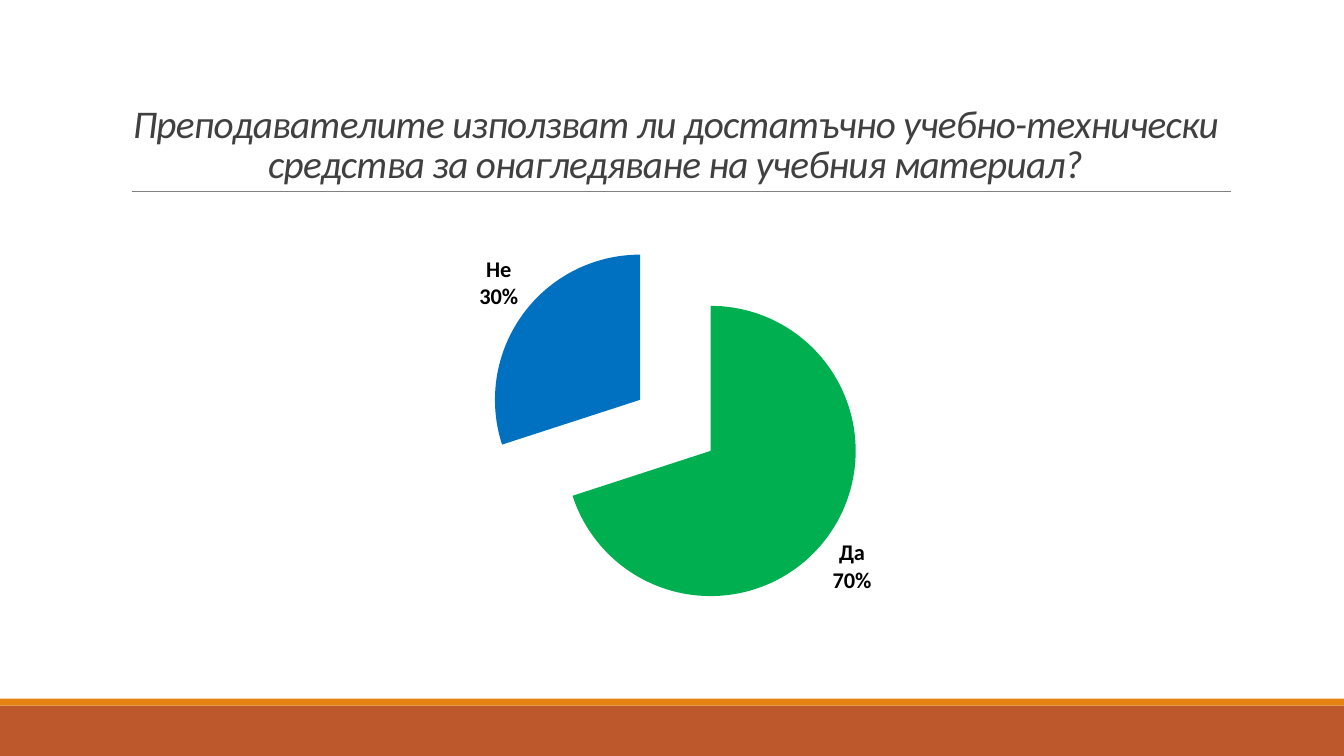
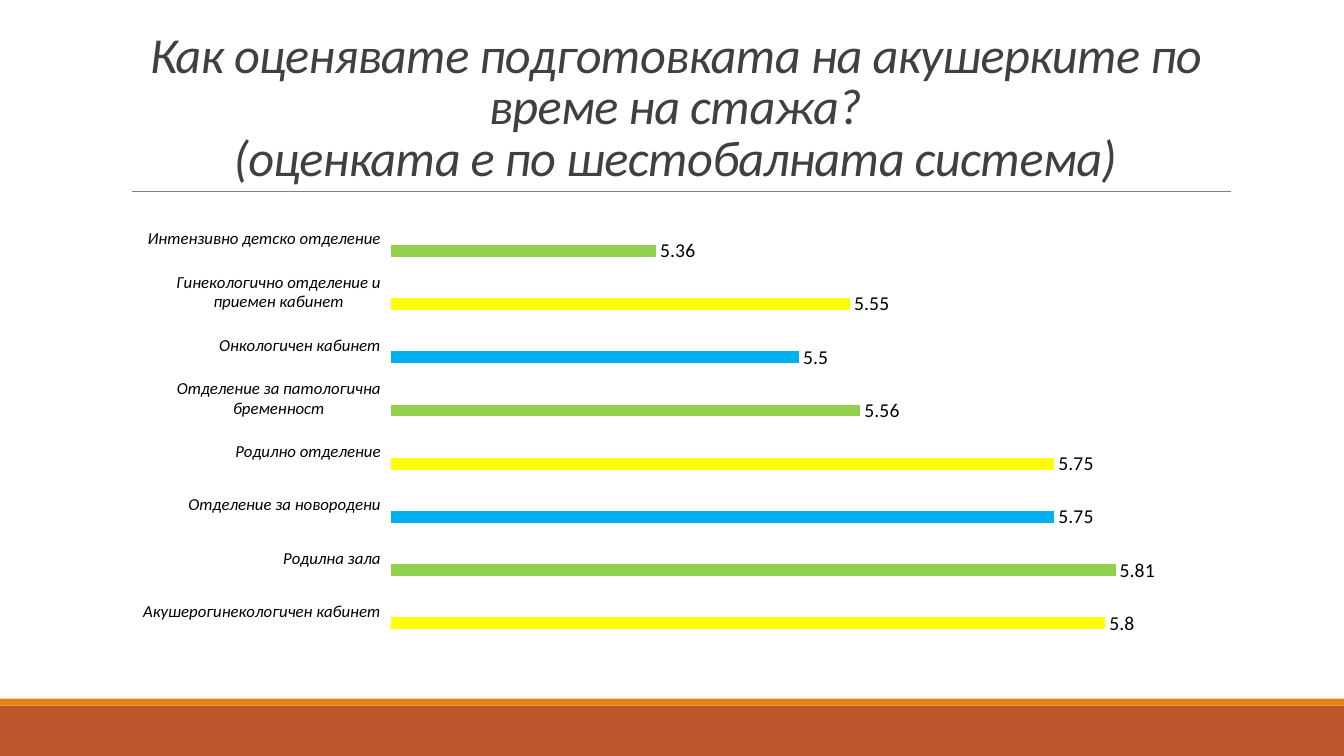
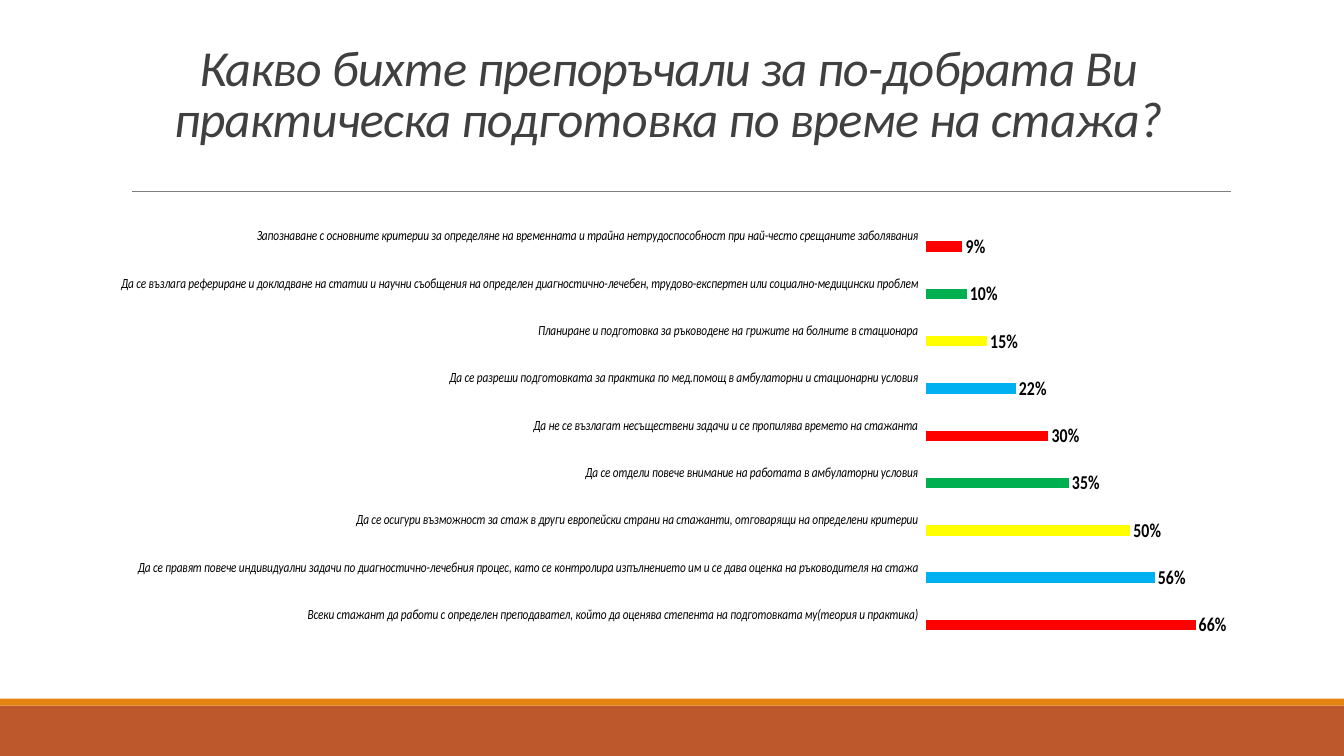
from itertools import cycle

from pptx import Presentation
from pptx.chart.data import CategoryChartData
from pptx.dml.color import RGBColor
from pptx.enum.chart import XL_CHART_TYPE, XL_LABEL_POSITION, XL_TICK_LABEL_POSITION, XL_TICK_MARK
from pptx.enum.shapes import MSO_CONNECTOR, MSO_SHAPE
from pptx.enum.text import MSO_ANCHOR, MSO_AUTO_SIZE, PP_ALIGN
from pptx.oxml.ns import qn
from pptx.util import Pt

PIE, BAR = XL_CHART_TYPE.PIE, XL_CHART_TYPE.BAR_CLUSTERED
OUTSIDE_END = XL_LABEL_POSITION.OUTSIDE_END
LABELS_LOW, NO_TICK = XL_TICK_LABEL_POSITION.LOW, XL_TICK_MARK.NONE
RECT, STRAIGHT = MSO_SHAPE.RECTANGLE, MSO_CONNECTOR.STRAIGHT
BOTTOM, CENTER, NO_FIT = MSO_ANCHOR.BOTTOM, PP_ALIGN.CENTER, MSO_AUTO_SIZE.NONE

# Shared look
FONT = "Calibri"
BLACK, TITLE_GREY, RULE_GREY = "000000", "404040", "808080"
RUST, ORANGE = "BD582C", "E48312"
GREEN, BLUE = "00B050", "0070C0"
RED, YELLOW, LIME, SKY = "FF0000", "FFFF00", "92D050", "00B0F0"
SLIDE_W, SLIDE_H = 960, 540
LEFT, CONTENT_W = 86.4, 792
TITLE_TOP, TITLE_H = 22.32, 114.48
CHART_TOP, CHART_H = 145.44, 316.8
RULE_Y = 136.8

# Chart contents, from the bottom bar upwards
WARD_GRADES = [
    ("Акушерогинекологичен кабинет", 5.8),
    ("Родилна зала", 5.81),
    ("Отделение за новородени", 5.75),
    ("Родилно отделение", 5.75),
    ("Отделение за патологична бременност", 5.56),
    ("Онкологичен кабинет", 5.5),
    ("Гинекологично отделение и приемен кабинет", 5.55),
    ("Интензивно детско отделение", 5.36),
]
RECOMMENDATIONS = [
    ("Всеки стажант да работи с определен преподавател, който да оценява "
     "степента на подготовката му(теория и практика)", 0.66),
    ("Да се правят повече индивидуални задачи по диагностично-лечебния процес, "
     "като се контролира изпълнението им и се дава оценка на ръководителя на стажа", 0.56),
    ("Да се осигури възможност за стаж в други европейски страни на стажанти, "
     "отговарящи на определени критерии", 0.5),
    ("Да се отдели повече внимание на работата в амбулаторни условия", 0.35),
    ("Да не се възлагат несъществени задачи и се пропилява времето на стажанта", 0.3),
    ("Да се разреши подготовката за практика по мед.помощ в амбулаторни и "
     "стационарни условия", 0.22),
    ("Планиране и подготовка за ръководене на грижите на болните в стационара", 0.15),
    ("Да се възлага рефериране и докладване на статии и научни съобщения на определен "
     "диагностично-лечебен, трудово-експертен или социално-медицински проблем", 0.1),
    ("Запознаване с основните критерии за определяне на временната и трайна "
     "нетрудоспособност при най-често срещаните заболявания", 0.09),
]


def rgb(color):
    return RGBColor.from_string(color)


def fill(target, color):
    target.fill.solid()
    target.fill.fore_color.rgb = rgb(color)


def set_font(font, size, color=BLACK, bold=False, italic=False):
    font.name, font.size = FONT, Pt(size)
    font.bold, font.italic = bold, italic
    font.color.rgb = rgb(color)


def add_band(slide, top, height, color):
    sp = slide.shapes.add_shape(RECT, 0, Pt(top), Pt(SLIDE_W), Pt(height))
    sp.shadow.inherit = False
    fill(sp, color)
    sp.line.fill.background()


def add_rule(slide):
    rule = slide.shapes.add_connector(STRAIGHT, Pt(94.32), Pt(RULE_Y), Pt(879.12), Pt(RULE_Y))
    rule.line.color.rgb = rgb(RULE_GREY)
    rule.line.width = Pt(0.5)
    sp_pr = rule._element.spPr
    sp_pr.append(sp_pr.makeelement(qn("a:effectLst"), {}))


def add_slide(prs, lines, size, width=CONTENT_W, height=TITLE_H):
    """Add a slide with the bands, the rule and the title."""
    slide = prs.slides.add_slide(prs.slide_layouts[5])
    add_band(slide, 504, 36, RUST)
    add_band(slide, 499, 5, ORANGE)
    add_rule(slide)

    title = slide.shapes.title
    title.left, title.top = Pt(LEFT), Pt(TITLE_TOP)
    title.width, title.height = Pt(width), Pt(height)
    tf = title.text_frame
    tf.word_wrap, tf.auto_size, tf.vertical_anchor = True, NO_FIT, BOTTOM
    p = tf.paragraphs[0]
    p.alignment, p.line_spacing = CENTER, 0.85
    for i, line in enumerate(lines):
        if i:
            p.add_line_break()
        r = p.add_run()
        r.text = line
        set_font(r.font, size, TITLE_GREY, italic=True)
    for r_pr in p._p.iter(qn("a:rPr")):
        r_pr.set("sz", str(size * 100))
        r_pr.set("spc", "-50")
    return slide


def add_chart(slide, kind, rows, colors, empty_series=0, number_format="General"):
    """Add a chart whose first series is coloured point by point."""
    data = CategoryChartData(number_format=number_format)
    data.categories = [name for name, _ in rows]
    data.add_series("Series 1", [value for _, value in rows])
    for n in range(empty_series):
        data.add_series(f"Series {n + 2}", [None] * len(rows))
    chart = slide.shapes.add_chart(
        kind, Pt(LEFT), Pt(CHART_TOP), Pt(CONTENT_W), Pt(CHART_H), data).chart
    chart.has_title = chart.has_legend = False
    set_font(chart.font, 10)
    series = chart.plots[0].series[0]
    for i, color in zip(range(len(rows)), cycle(colors)):
        fill(series.points[i].format, color)
    return chart


def add_pie(slide, rows, colors):
    chart = add_chart(slide, PIE, rows, colors)
    series = chart.plots[0].series[0]
    labels = series.data_labels
    labels.show_value = False
    labels.show_category_name = labels.show_percentage = True
    labels.position = OUTSIDE_END
    set_font(labels.font, 16, bold=True)

    # Label on two lines, slices pulled apart
    ser = series._element
    separator = ser.makeelement(qn("c:separator"), {})
    separator.text = "\n"
    ser.find(qn("c:dLbls")).find(qn("c:showBubbleSize")).addnext(separator)
    explosion = ser.makeelement(qn("c:explosion"), {"val": "30"})
    ser.find(qn("c:tx")).addnext(explosion)


def add_bars(slide, rows, colors, low, high, name_size, number_format="General", bold=False):
    chart = add_chart(slide, BAR, rows, colors, 2, number_format)
    plot = chart.plots[0]
    plot.gap_width, plot.overlap, plot.vary_by_categories = 150, 0, False

    names = chart.category_axis
    names.major_tick_mark = names.minor_tick_mark = NO_TICK
    names.tick_label_position = LABELS_LOW
    names.has_major_gridlines = False
    names.format.line.fill.background()
    set_font(names.tick_labels.font, name_size, italic=True)

    values = chart.value_axis
    values.minimum_scale, values.maximum_scale = low, high
    values.has_major_gridlines = values.visible = False

    labels = plot.series[0].data_labels
    labels.show_value, labels.position = True, OUTSIDE_END
    labels.number_format, labels.number_format_is_linked = number_format, False
    set_font(labels.font, 14, bold=bold)


def main():
    prs = Presentation()
    prs.slide_width, prs.slide_height = Pt(SLIDE_W), Pt(SLIDE_H)

    # Teaching aids
    slide = add_slide(prs, ["Преподавателите използват ли достатъчно учебно-технически "
                            "средства за онагледяване на учебния материал?"], 28)
    add_pie(slide, [("Да", 70), ("Не", 30)], [GREEN, BLUE])

    # Grades by ward
    slide = add_slide(prs, ["Как оценявате подготовката на акушерките по време на стажа?",
                            "(оценката е по шестобалната система)"], 36)
    add_bars(slide, WARD_GRADES, [YELLOW, LIME, SKY], 5.1, 5.9, 12)

    # Recommendations
    slide = add_slide(prs, ["Какво бихте препоръчали за по-добрата Ви практическа "
                            "подготовка по време на стажа?"], 36, 781.92, 87.12)
    add_bars(slide, RECOMMENDATIONS, [RED, SKY, YELLOW, GREEN], 0, 0.7, 10, "0%", True)

    prs.save("out.pptx")


if __name__ == "__main__":
    main()
